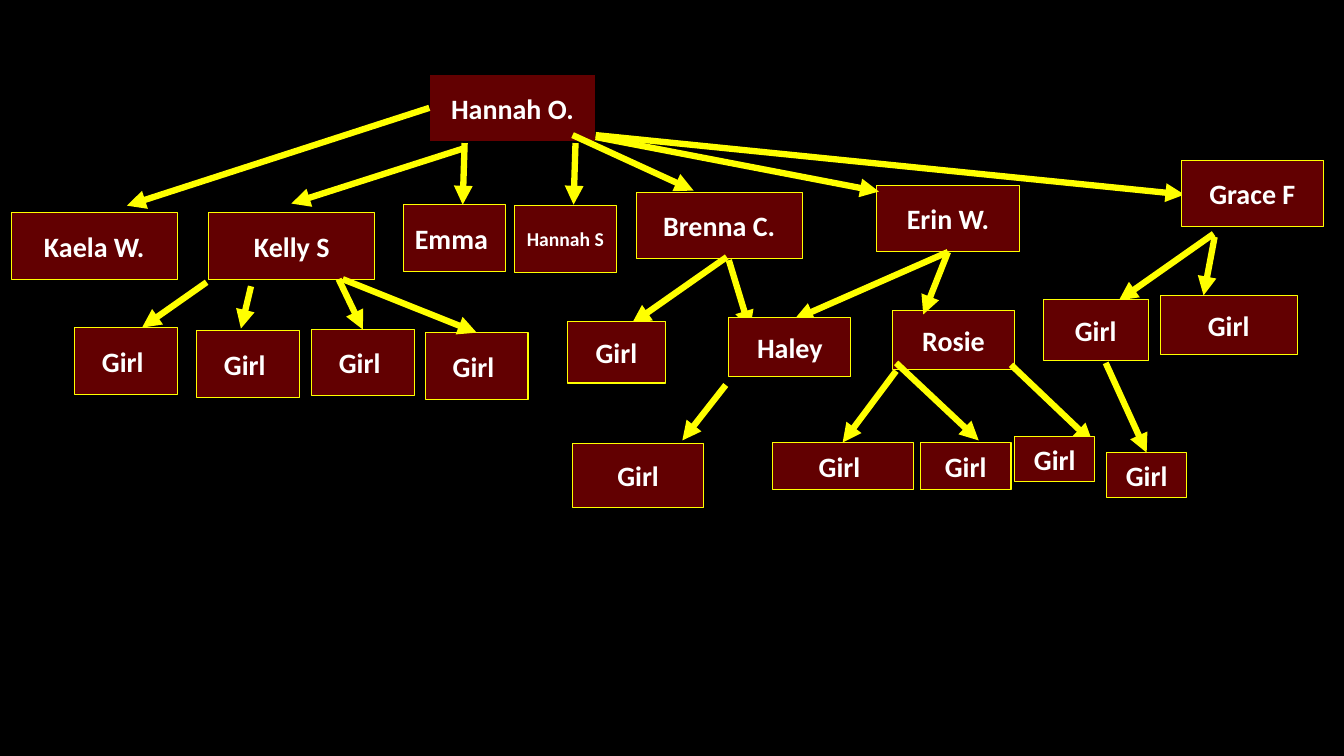
import pptx
import pptx.util
import pptx.dml.color
import pptx.enum.shapes
import pptx.enum.text
import lxml.etree
from dataclasses import dataclass
from pptx.oxml.ns import qn

Pt = pptx.util.Pt
TOP, LEFT, BOTTOM = 0, 1, 2


@dataclass(frozen=True)
class Theme:
    background: str = "000000"
    box_fill: str = "620001"
    accent: str = "FFFF00"
    text: str = "FFFFFF"
    font: str = "Calibri"
    name_size: float = 20
    small_size: float = 14
    border: float = 0.75
    arrow: float = 4.5


def rgb(value):
    return pptx.dml.color.RGBColor.from_string(value)


class TreeSlide:
    def __init__(self, deck, theme):
        self.theme = theme
        self.slide = deck.slides.add_slide(deck.slide_layouts[6])
        self.people = {}
        fill = self.slide.background.fill
        fill.solid()
        fill.fore_color.rgb = rgb(theme.background)

    def person(self, key, label, x, y, width, height, size=None, border=None):
        """Draw a named box and remember it under key for arrows to join."""
        theme = self.theme
        box = self.slide.shapes.add_shape(
            pptx.enum.shapes.MSO_SHAPE.RECTANGLE, Pt(x), Pt(y), Pt(width), Pt(height))
        box.shadow.inherit = False
        box.fill.solid()
        box.fill.fore_color.rgb = rgb(theme.box_fill)
        box.line.color.rgb = rgb(border or theme.accent)
        box.line.width = Pt(theme.border)
        box.text_frame.vertical_anchor = pptx.enum.text.MSO_ANCHOR.MIDDLE
        paragraph = box.text_frame.paragraphs[0]
        paragraph.alignment = pptx.enum.text.PP_ALIGN.CENTER
        run = paragraph.add_run()
        run.text = label
        run.font.color.rgb = rgb(theme.text)
        style = {"name": theme.font, "size": Pt(size or theme.name_size), "bold": True}
        for attribute, value in style.items():
            setattr(run.font, attribute, value)
        self.people[key] = box

    def arrow(self, start, end):
        """Draw an arrow; each end is a point (x, y) or a joint (person key, side)."""
        joints = [isinstance(tip[0], str) for tip in (start, end)]
        points = [(0, 0) if joined else tip for tip, joined in zip((start, end), joints)]
        line = self.slide.shapes.add_connector(
            pptx.enum.shapes.MSO_CONNECTOR.STRAIGHT,
            *(Pt(value) for point in points for value in point))
        for tip, joined, connect in zip(
                (start, end), joints, (line.begin_connect, line.end_connect)):
            if joined:
                connect(self.people[tip[0]], tip[1])
        line.line.color.rgb = rgb(self.theme.accent)
        line.line.width = Pt(self.theme.arrow)
        lxml.etree.SubElement(line.line._get_or_add_ln(), qn("a:tailEnd"), type="triangle")
        lxml.etree.SubElement(line._element.spPr, qn("a:effectLst"))


LEADER = (118.8, 47.5)
MEDIUM = (101.5, 47.5)
SMALL = (73.4, 47.5)
TINY = (56.9, 32.4)

PEOPLE_BEHIND_ARROWS = [
    ("Brenna", "Brenna C.", 454.3, 137.5, *LEADER),
    ("Kelly", "Kelly S", 149, 151.9, *LEADER),
    ("Kaela", "Kaela W.", 7.9, 151.9, *LEADER),
    ("Erin", "Erin W.", 626.4, 132.5, *MEDIUM),
    ("Rosie", "Rosie", 637.2, 221.8, 87.8, 41.8),
    ("Kelly girl 3", "Girl ", 222.5, 235.4, *SMALL),
    ("Kelly girl 4", "Girl ", 303.8, 237.6, *SMALL),
    ("Rosie girl 1", "Girl ", 551.5, 316.1, 100.8, 33.8),
    ("Grace girl 3", "Girl", 790.6, 323.3, *TINY),
]

ARROWS = [
    # From Hannah O.
    (("Hannah O", LEFT), (90.7, 146.9)),
    ((331.9, 105.8), (208.1, 145.4)),
    ((409, 96.5), (495.4, 136.1)),
    ((331.9, 102.2), (330.5, 146.2)),
    ((425.5, 96.5), (846, 139)),
    ((425.5, 97.9), (627.8, 136.8)),
    ((411.1, 102.2), (409.7, 146.2)),
    # From Kelly
    ((147.6, 201.6), (101.5, 234)),
    ((179.3, 204.5), (172.1, 234.7)),
    ((241.9, 199.4), ("Kelly girl 3", TOP)),
    ((244.8, 199.4), ("Kelly girl 4", TOP)),
    # From Brenna and Haley
    ((519.1, 183.6), (451.4, 231.1)),
    ((520.6, 185.8), (535.7, 235.4)),
    ((518.4, 275), (487.4, 314.6)),
    # From Erin and Rosie
    (("Erin", BOTTOM), (567.4, 228.2)),
    (("Erin", BOTTOM), (659.5, 224.6)),
    ((640.1, 265), ("Rosie girl 1", TOP)),
    ((640.1, 259.2), (699.1, 314.6)),
    ((722.2, 260.6), (780.5, 316.1)),
    # From Grace
    ((866.9, 167), (799.2, 214.6)),
    ((867.6, 169.2), (859.7, 211)),
    ((789.8, 259.2), ("Grace girl 3", TOP)),
]

PEOPLE_OVER_ARROWS = [
    ("Kelly girl 1", "Girl ", 53.3, 234, *SMALL),
    ("Kelly girl 2", "Girl ", 140.4, 236.2, *SMALL),
    ("Brenna girl", "Girl", 405.4, 229.7, 69.8, 43.9),
    ("Haley", "Haley", 520.6, 226.8, 87.1, 42.5),
    ("Rosie girl 2", "Girl", 657.4, 316.1, 64.8, 33.8),
    ("Emma", "Emma ", 288, 146.2, *SMALL),
    ("Haley girl", "Girl", 409, 316.8, 93.6, 46.1),
    ("Grace girl 1", "Girl", 745.2, 213.8, 74.9, 43.9),
    ("Grace girl 2", "Girl", 828.7, 211, 97.9, 42.5),
    ("Grace", "Grace F", 843.8, 114.5, *MEDIUM),
    ("Rosie girl 3", "Girl", 725, 311.8, *TINY),
]


def main():
    theme = Theme()
    deck = pptx.Presentation()
    deck.slide_width, deck.slide_height = Pt(960), Pt(540)
    tree = TreeSlide(deck, theme)
    tree.person("Hannah O", "Hannah O.", 306.7, 53.3, *LEADER, border=theme.background)
    for person in PEOPLE_BEHIND_ARROWS:
        tree.person(*person)
    for start, end in ARROWS:
        tree.arrow(start, end)
    for person in PEOPLE_OVER_ARROWS:
        tree.person(*person)
    tree.person("Hannah S", "Hannah S", 367.2, 146.9, *SMALL, size=theme.small_size)
    deck.save("out.pptx")


if __name__ == "__main__":
    main()
